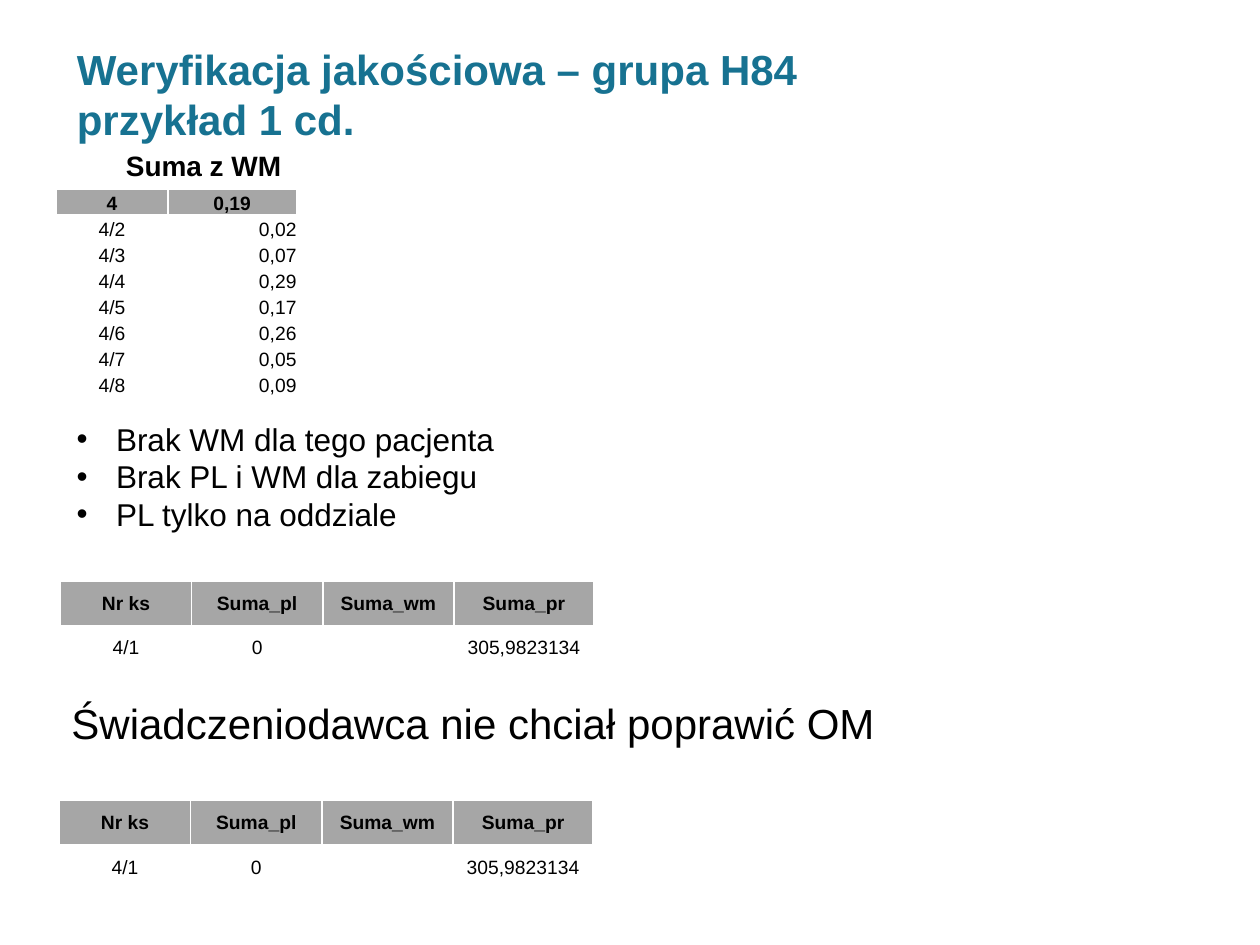
import lxml.etree
import pptx
import pptx.dml.color
import pptx.enum.text
import pptx.oxml.ns
import pptx.util

Pt = pptx.util.Pt
ALIGN = pptx.enum.text.PP_ALIGN
ANCHOR = pptx.enum.text.MSO_ANCHOR
AUTO_SIZE = pptx.enum.text.MSO_AUTO_SIZE
qn = pptx.oxml.ns.qn


def format_runs(para, size, color="000000", bold=False):
    for span in para.runs:
        span.font.name = "Arial"
        span.font.size = Pt(size)
        span.font.bold = bold
        span.font.color.rgb = pptx.dml.color.RGBColor.from_string(color)


def add_grid(page, left, top, widths, row_height, rows, anchor, margin, aligns):
    """Add a table with a grey bold header row, clear body and white borders."""
    frame = page.shapes.add_table(len(rows), len(widths), Pt(left), Pt(top),
                                  Pt(sum(widths)), Pt(row_height * len(rows)))
    table = frame.table
    table.first_row = table.horz_banding = False
    for column, width in zip(table.columns, widths):
        column.width = Pt(width)
    for r, values in enumerate(rows):
        table.rows[r].height = Pt(row_height)
        for c, value in enumerate(values):
            cell = table.cell(r, c)
            cell.margin_left = cell.margin_right = cell.margin_top = Pt(margin)
            cell.margin_bottom = 0
            cell.vertical_anchor = anchor
            cell.text = value
            para = cell.text_frame.paragraphs[0]
            para.alignment = ALIGN.CENTER if r == 0 else aligns[c]
            format_runs(para, 11, bold=r == 0)
            properties = cell._tc.get_or_add_tcPr()
            for side in ("lnL", "lnR", "lnT", "lnB"):
                line = lxml.etree.SubElement(properties, qn("a:" + side), w=str(Pt(1)))
                fill = lxml.etree.SubElement(line, qn("a:solidFill"))
                lxml.etree.SubElement(fill, qn("a:srgbClr"), val="FFFFFF")
            if r == 0:
                cell.fill.solid()
                cell.fill.fore_color.rgb = pptx.dml.color.RGBColor.from_string("A6A6A6")
            else:
                cell.fill.background()


deck = pptx.Presentation()
deck.slide_width, deck.slide_height = Pt(720), Pt(540)
page = deck.slides.add_slide(deck.slide_layouts[5])

# Title
title = page.shapes.title
title.left, title.top, title.width, title.height = Pt(36.7), Pt(31.7), Pt(562.3), Pt(43.9)
title.text_frame.text = "Weryfikacja jakościowa – grupa H84\vprzykład 1 cd."
title.text_frame.auto_size = AUTO_SIZE.NONE
title.text_frame.vertical_anchor = ANCHOR.MIDDLE
title.text_frame.paragraphs[0].alignment = ALIGN.LEFT
format_runs(title.text_frame.paragraphs[0], 24, "177291", bold=True)

# Tables
sums = ["0,02", "0,07", "0,29", "0,17", "0,26", "0,05", "0,09"]
sum_rows = [["4", "0,19"]] + [[f"4/{n}", value] for n, value in enumerate(sums, 2)]
add_grid(page, 32, 108, [64, 73.5], 14.85, sum_rows, ANCHOR.BOTTOM, 0,
         [ALIGN.CENTER, ALIGN.RIGHT])

patient_rows = [["Nr ks", "Suma_pl", "Suma_wm", "Suma_pr"],
                ["4/1", "0", "", "305,9823134"]]
for left, top in [(34.5, 332), (34, 457.2)]:
    add_grid(page, left, top, [75, 75, 75, 80], 25.4, patient_rows, ANCHOR.MIDDLE, 0.7,
             [ALIGN.CENTER] * 4)

# Text boxes: place, lines, size, bold, alignment, bulleted
texts = [
    ((31.7, 81.4, 169.2, 26.6), ["Suma z WM"], 16, True, ALIGN.CENTER, False),
    ((36.7, 236.2, 255.6, 72.7),
     ["Brak WM dla tego pacjenta", "Brak PL i WM dla zabiegu", "PL tylko na oddziale"],
     18, False, ALIGN.LEFT, True),
    ((33.8, 395.3, 491.8, 36), ["Świadczeniodawca nie chciał poprawić OM"],
     24, False, ALIGN.LEFT, False),
]
for place, lines, size, bold, alignment, bulleted in texts:
    box = page.shapes.add_textbox(*map(Pt, place))
    box.text_frame.word_wrap = True
    box.text_frame.auto_size = AUTO_SIZE.SHAPE_TO_FIT_TEXT
    box.text_frame.text = "\n".join(lines)
    for para in box.text_frame.paragraphs:
        para.alignment = alignment
        if bulleted:
            properties = para._p.get_or_add_pPr()
            properties.set("marL", str(Pt(22.5)))
            properties.set("indent", str(-Pt(22.5)))
            lxml.etree.SubElement(properties, qn("a:buFont"), typeface="Arial")
            lxml.etree.SubElement(properties, qn("a:buChar"), char="•")
        format_runs(para, size, bold=bold)

deck.save("out.pptx")
